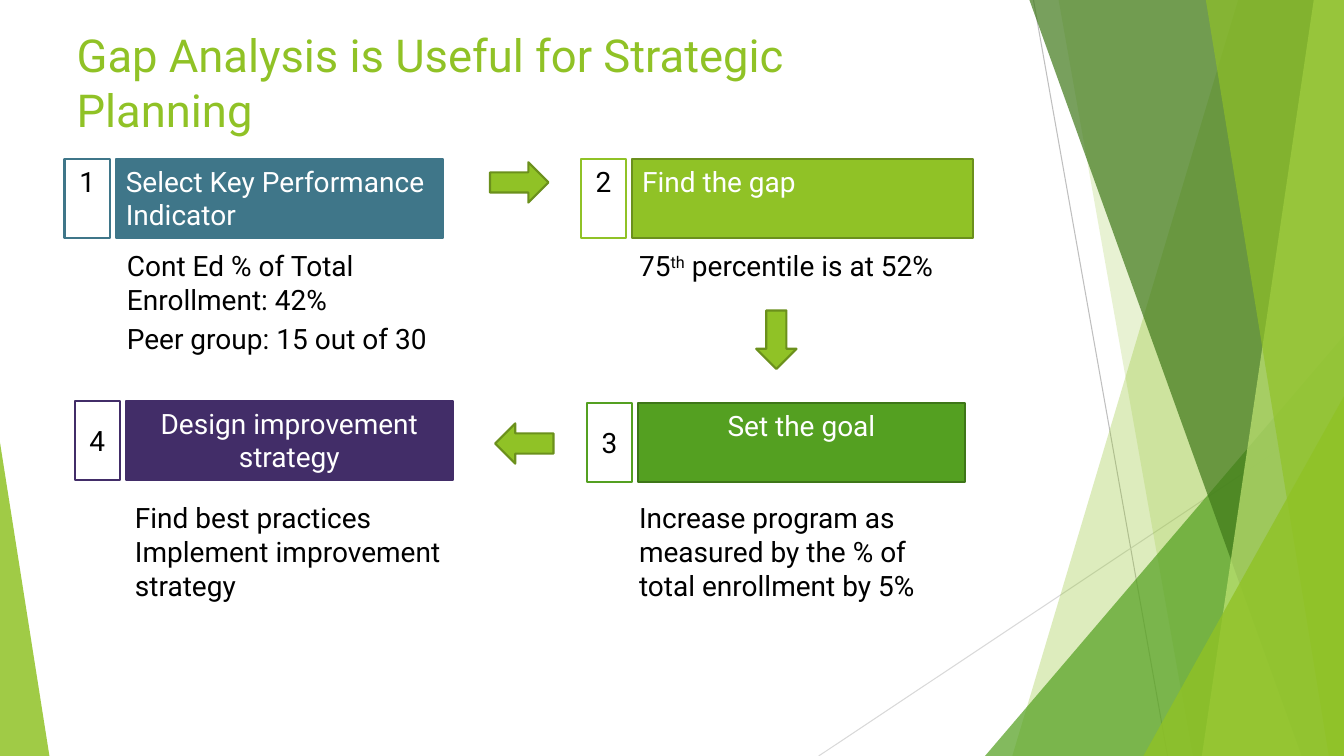
from dataclasses import dataclass
from typing import Optional

from lxml.etree import SubElement
from pptx import Presentation
from pptx.dml.color import RGBColor
from pptx.enum.shapes import MSO_CONNECTOR, MSO_SHAPE
from pptx.enum.text import MSO_ANCHOR, MSO_AUTO_SIZE, PP_ALIGN
from pptx.oxml.ns import qn
from pptx.util import Inches, Pt


@dataclass(frozen=True)
class Theme:
    font: str = "Roboto"
    title_size: float = 32.4
    body_size: float = 20
    line_width: float = 1.5
    hairline: float = 0.75
    white: str = "FFFFFF"
    black: str = "000000"
    lime: str = "90C226"
    lime_dark: str = "6B901C"
    lime_pale: str = "C0E474"
    green: str = "54A021"
    green_dark: str = "3E7618"
    forest: str = "3F7819"
    teal: str = "3F7689"
    purple: str = "422D68"


@dataclass(frozen=True)
class Ray:
    start: tuple
    end: tuple
    color: str


@dataclass(frozen=True)
class Facet:
    """Full-height band reaching the right edge, given by its left corners."""
    top_x: float
    bottom_x: float
    color: str
    alpha: int


@dataclass(frozen=True)
class Wedge:
    """Right triangle standing on the bottom edge; peak 0 is left, 1 is right."""
    x: float
    y: float
    w: float
    peak: int
    color: str
    alpha: int


@dataclass(frozen=True)
class Step:
    number: str
    label: str
    x: float
    y: float
    w: float
    color: str
    border: str
    align: PP_ALIGN
    number_anchor: MSO_ANCHOR


@dataclass(frozen=True)
class Note:
    x: float
    y: float
    w: float
    h: float
    paragraphs: tuple  # each paragraph is a tuple of (text, is superscript)
    wrap: bool = True


@dataclass(frozen=True)
class Arrow:
    x: float
    y: float
    rotation: int


T = Theme()
W, H = 13.33, 7.5
STEP_H, NUMBER_W, NUMBER_GAP = 0.78, 0.45, 0.06
ARROW_W, ARROW_H = 0.58, 0.4

RAYS = [Ray((10.25, 0), (11.58, H), "BFBFBF"), Ray((W, 4.03), (8.12, H), "D9D9D9")]
DECOR = [
    Facet(12.28, 10.04, T.lime, 30),
    Facet(10.5, 11.83, T.lime, 20),
    Wedge(9.77, 3.33, 3.56, 1, T.green, 72),
    Facet(10.21, 12.91, T.forest, 70),
    Facet(13.03, 11.92, T.lime_pale, 70),
    Facet(11.96, 13.18, T.lime, 65),
    Wedge(11.34, 3.93, 1.99, 1, T.lime, 80),
    Wedge(0, 4.39, 0.49, 0, T.lime, 85),
]
LEFT, CENTER = PP_ALIGN.LEFT, PP_ALIGN.CENTER
TOP, MIDDLE = MSO_ANCHOR.TOP, MSO_ANCHOR.MIDDLE
STEPS = [
    Step("1", "Select Key Performance Indicator", 1.15, 1.58, 3.24, T.teal, T.teal, LEFT, TOP),
    Step("2", "Find the gap", 6.27, 1.58, 3.38, T.lime, T.lime_dark, LEFT, TOP),
    Step("3", "Set the goal", 6.33, 4, 3.24, T.green, T.green_dark, CENTER, MIDDLE),
    Step("4", "Design improvement strategy", 1.25, 3.98, 3.24, T.purple, T.purple, CENTER, MIDDLE),
]
NOTES = [
    Note(1.16, 2.42, 3.31, 0.77, ((("Cont Ed % of Total Enrollment: 42%", False),),)),
    Note(1.16, 3.14, 3.23, 0.44, ((("Peer group: 15 out of 30", False),),), False),
    Note(6.24, 2.42, 3.21, 0.44,
         ((("75", False), ("th", True), (" percentile is at 52%", False)),), False),
    Note(6.24, 4.92, 3.34, 1.11,
         ((("Increase program as measured by the % of total enrollment by 5%", False),),)),
    Note(1.24, 4.92, 3.3, 1.11,
         ((("Find best practices", False),),
          (("Implement improvement\vstrategy", False),)), False),
]
ARROWS = [Arrow(4.86, 1.61, 0), Arrow(7.41, 3.17, 90), Arrow(4.91, 4.2, 180)]


def set_format(target, values: dict) -> None:
    for name, value in values.items():
        setattr(target, name, value)


def set_font(font, color: str, size: float = T.body_size) -> None:
    set_format(font, {"name": T.font, "size": Pt(size)})
    font.color.rgb = RGBColor.from_string(color)


def paint(sp, fill: str, line: Optional[str] = None, alpha: int = 100) -> None:
    sp.shadow.inherit = False
    sp.fill.solid()
    sp.fill.fore_color.rgb = RGBColor.from_string(fill)
    if alpha < 100:
        color = sp._element.spPr.find(qn("a:solidFill"))[0]
        SubElement(color, qn("a:alpha")).set("val", str(alpha * 1000))
    if line:
        sp.line.color.rgb = RGBColor.from_string(line)
        sp.line.width = Pt(T.line_width)
    else:
        sp.line.fill.background()


def add_preset(s, kind: MSO_SHAPE, x: float, y: float, w: float, h: float):
    return s.shapes.add_shape(kind, Inches(x), Inches(y), Inches(w), Inches(h))


def add_ray(s, ray: Ray) -> None:
    ends = [Inches(v) for v in ray.start + ray.end]
    line = s.shapes.add_connector(MSO_CONNECTOR.STRAIGHT, *ends)
    line.line.color.rgb = RGBColor.from_string(ray.color)
    line.line.width = Pt(T.hairline)
    SubElement(line._element.spPr, qn("a:effectLst"))


def add_facet(s, facet: Facet) -> None:
    corners = [(W, 0), (W, H), (facet.bottom_x, H)]
    builder = s.shapes.build_freeform(Inches(facet.top_x), Inches(0))
    builder.add_line_segments([(Inches(x), Inches(y)) for x, y in corners])
    paint(builder.convert_to_shape(), facet.color, alpha=facet.alpha)


def add_wedge(s, wedge: Wedge) -> None:
    sp = add_preset(s, MSO_SHAPE.ISOSCELES_TRIANGLE, wedge.x, wedge.y, wedge.w, H - wedge.y)
    sp.adjustments[0] = wedge.peak
    paint(sp, wedge.color, alpha=wedge.alpha)


def add_box(s, text: str, x: float, y: float, w: float, fill: str, line: str,
            color: str, align: PP_ALIGN, anchor: MSO_ANCHOR) -> None:
    sp = add_preset(s, MSO_SHAPE.RECTANGLE, x, y, w, STEP_H)
    paint(sp, fill, line)
    tf = sp.text_frame
    set_format(tf, {"text": text, "word_wrap": True, "vertical_anchor": anchor})
    p = tf.paragraphs[0]
    p.alignment = align
    set_font(p.runs[0].font, color)


def add_step(s, step: Step) -> None:
    add_box(s, step.label, step.x, step.y, step.w, step.color, step.border,
            T.white, step.align, TOP)
    add_box(s, step.number, step.x - NUMBER_GAP - NUMBER_W, step.y, NUMBER_W,
            T.white, step.color, T.black, CENTER, step.number_anchor)


def add_note(s, note: Note) -> None:
    tf = s.shapes.add_textbox(Inches(note.x), Inches(note.y),
                              Inches(note.w), Inches(note.h)).text_frame
    set_format(tf, {"word_wrap": note.wrap, "auto_size": MSO_AUTO_SIZE.SHAPE_TO_FIT_TEXT})
    for i, pieces in enumerate(note.paragraphs):
        p = tf.add_paragraph() if i else tf.paragraphs[0]
        for text, superscript in pieces:
            for j, part in enumerate(text.split("\v")):
                if j:
                    p.add_line_break()
                r = p.add_run()
                r.text = part
                set_font(r.font, T.black)
                if superscript:
                    r._r.get_or_add_rPr().set("baseline", "30000")


def add_arrow(s, arrow: Arrow) -> None:
    sp = add_preset(s, MSO_SHAPE.RIGHT_ARROW, arrow.x, arrow.y, ARROW_W, ARROW_H)
    sp.rotation = arrow.rotation
    paint(sp, T.lime, T.lime_dark)


def add_title(s, text: str) -> None:
    sp = s.shapes.title
    set_format(sp, {"left": Inches(0.66), "top": Inches(0.22),
                    "width": Inches(9), "height": Inches(1.08)})
    tf = sp.text_frame
    set_format(tf, {"text": text, "word_wrap": True, "vertical_anchor": TOP,
                    "auto_size": MSO_AUTO_SIZE.NONE})
    p = tf.paragraphs[0]
    p.alignment = LEFT
    set_font(p.runs[0].font, T.lime, T.title_size)


def main() -> None:
    prs = Presentation()
    set_format(prs, {"slide_width": Inches(W), "slide_height": Inches(H)})
    s = prs.slides.add_slide(prs.slide_layouts[5])

    # Decorative rays and translucent facets
    for ray in RAYS:
        add_ray(s, ray)
    for part in DECOR:
        (add_facet if isinstance(part, Facet) else add_wedge)(s, part)

    # Title and the four-step cycle
    add_title(s, "Gap Analysis is Useful for Strategic Planning")
    for draw, items in ((add_step, STEPS), (add_note, NOTES), (add_arrow, ARROWS)):
        for item in items:
            draw(s, item)

    prs.save("out.pptx")


if __name__ == "__main__":
    main()
